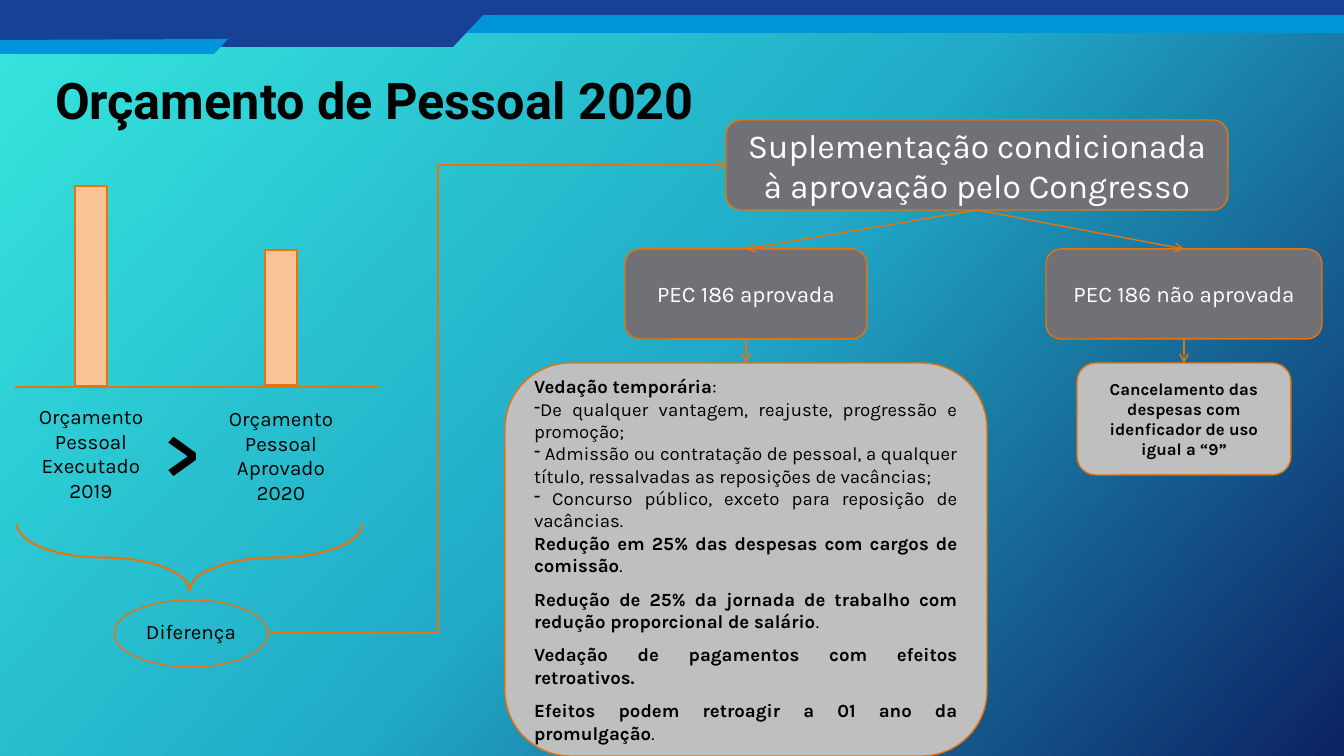
import copy
import dataclasses
import pptx
import pptx.dml.color
import pptx.enum.shapes
import pptx.enum.text
import pptx.oxml.ns
import pptx.oxml.xmlchemy
import pptx.util

SCALE = 914400 / 100.8
SHAPES = pptx.enum.shapes.MSO_SHAPE
LINKS = pptx.enum.shapes.MSO_CONNECTOR
ALIGN = pptx.enum.text.PP_ALIGN
ANCHOR = pptx.enum.text.MSO_ANCHOR
qn = pptx.oxml.ns.qn


@dataclasses.dataclass(frozen=True)
class Theme:
    heading_font: str = "Roboto"
    body_font: str = "Karla"
    gradient: tuple = ("36E6DD", "21ABC8", "0C2263")
    navy: str = "164194"
    sky: str = "0095DB"
    orange: str = "E5730E"
    peach: str = "F8C496"
    dark: str = "707176"
    light: str = "BFBFBF"
    black: str = "000000"
    white: str = "FFFFFF"
    title: float = 36
    sign: float = 48
    headline: float = 24
    branch: float = 16
    label: float = 14.7
    detail: float = 13.3
    note: float = 12
    gap: float = 8


THEME = Theme()


def px(*lengths):
    return [pptx.util.Emu(round(length * SCALE)) for length in lengths]


def rgb(color):
    return pptx.dml.color.RGBColor.from_string(color)


def add_xml(parent, tag, **attributes):
    child = pptx.oxml.xmlchemy.OxmlElement(tag)
    for name, value in attributes.items():
        child.set(name, value)
    parent.append(child)
    return child


def style_para(para, size, color=THEME.black, bold=False, align=ALIGN.CENTER, font=THEME.body_font):
    para.alignment = align
    for span in para.runs:
        span.font.size = pptx.util.Pt(size)
        span.font.name = font
        span.font.bold = bold
        span.font.color.rgb = rgb(color)


def paint(shape, fill, line=None, width=1):
    shape.shadow.inherit = False
    if fill:
        shape.fill.solid()
        shape.fill.fore_color.rgb = rgb(fill)
    else:
        shape.fill.background()
    if line:
        shape.line.color.rgb = rgb(line)
        shape.line.width = pptx.util.Pt(width)
    else:
        shape.line.fill.background()
    return shape


def add_shape(page, kind, frame, fill, line=THEME.orange, width=1):
    return paint(page.shapes.add_shape(kind, *px(*frame)), fill, line, width)


def add_ribbon(page, points, fill):
    builder = page.shapes.build_freeform(*points[0], scale=SCALE)
    builder.add_line_segments(points[1:], close=True)
    paint(builder.convert_to_shape(), fill)


def add_label(page, frame, text, size, bold=False, align=ALIGN.CENTER):
    box = page.shapes.add_textbox(*px(*frame))
    box.text_frame.word_wrap = True
    box.text_frame.text = text
    style_para(box.text_frame.paragraphs[0], size, bold=bold, align=align)


def add_card(page, frame, fill, text="", size=THEME.branch, color=THEME.white, bold=False):
    card = add_shape(page, SHAPES.ROUNDED_RECTANGLE, frame, fill)
    card.text_frame.word_wrap = True
    card.text_frame.vertical_anchor = ANCHOR.MIDDLE
    card.text_frame.text = text
    style_para(card.text_frame.paragraphs[0], size, color, bold)
    return card


def add_link(page, start, end, kind=LINKS.STRAIGHT, arrow=True):
    link = page.shapes.add_connector(kind, *px(*start, *end))
    link.line.color.rgb = rgb(THEME.orange)
    link.line.width = pptx.util.Pt(1)
    properties = link.element.spPr
    if arrow:
        add_xml(properties.find(qn("a:ln")), "a:tailEnd", type="arrow")
    add_xml(properties, "a:effectLst")
    return link


def join_cards(page, upper, lower):
    link = add_link(page, (0, 0), (0, 0))
    link.begin_connect(upper, 2)
    link.end_connect(lower, 0)


def fill_measures(card, measures):
    frame = card.text_frame
    for index, (strong, plain, bulleted, spaced) in enumerate(measures):
        para = frame.paragraphs[0] if index == 0 else frame.add_paragraph()
        if bulleted:
            properties = para._p.get_or_add_pPr()
            properties.set("marL", "0")
            properties.set("indent", "0")
            add_xml(properties, "a:buChar", char="-")
        para.text = strong or plain
        if strong and plain:
            para.add_run().text = plain
        style_para(para, THEME.detail, align=ALIGN.JUSTIFY)
        if strong:
            para.runs[0].font.bold = True
        if spaced:
            para.space_before = pptx.util.Pt(THEME.gap)


def paint_background(page):
    fill = page.background.fill
    fill.gradient()
    fill.gradient_angle = 318
    stops = page.element.find(".//" + qn("a:gsLst"))
    stops.insert(1, copy.deepcopy(stops[0]))
    for index, (stop, color) in enumerate(zip(fill.gradient_stops, THEME.gradient)):
        stop.position = index / 2
        stop.color.rgb = rgb(color)


def add_banner(page):
    add_shape(page, SHAPES.RECTANGLE, (0, 0, 1344, 33), THEME.sky, None)
    add_shape(page, SHAPES.RECTANGLE, (0, 0, 1344, 15), THEME.navy, None)
    add_ribbon(page, [(484, 14), (0, 14), (0, 47), (453, 47)], THEME.navy)
    add_ribbon(page, [(228, 39), (0, 40), (0, 54), (214, 54)], THEME.sky)


def add_title(page, text):
    title = page.shapes.title
    title.left, title.top, title.width, title.height = px(45, 66, 1252, 127)
    frame = title.text_frame
    frame.margin_left = frame.margin_right = frame.margin_top = frame.margin_bottom = px(10)[0]
    frame.vertical_anchor = ANCHOR.TOP
    frame.text = text
    frame.paragraphs[0].line_spacing = 0.9
    style_para(frame.paragraphs[0], THEME.title, bold=True, align=ALIGN.LEFT, font=THEME.heading_font)


def add_comparison(page):
    add_label(page, (155, 406, 103, 92), ">", THEME.sign, True, ALIGN.LEFT)
    for bar, label, text in (
        ((75, 186, 32, 200), (20, 399, 142, 110), "Orçamento Pessoal Executado 2019"),
        ((265, 250, 32, 135), (210, 401, 142, 110), "Orçamento Pessoal Aprovado 2020"),
    ):
        add_shape(page, SHAPES.RECTANGLE, bar, THEME.peach)
        add_label(page, label, text, THEME.label)
    add_link(page, (15, 387), (379, 387), arrow=False)
    brace = add_shape(page, SHAPES.LEFT_BRACE, (156, 385, 67, 345), None, width=1.5)
    brace.adjustments[0] = 1.293
    brace.rotation = 270
    add_shape(page, SHAPES.OVAL, (114, 600, 154, 67), None)
    add_label(page, (120, 614, 142, 35), "Diferença", THEME.label)


def add_decision_tree(page):
    route = add_link(page, (268, 633), (726, 165), LINKS.ELBOW)
    guides = route.element.spPr.find(qn("a:prstGeom")).get_or_add_avLst()
    add_xml(guides, "a:gd", name="adj1", fmla="val 37100")
    root = add_card(page, (726, 120, 502, 90), THEME.dark,
                    "Suplementação condicionada à aprovação pelo Congresso", THEME.headline)
    approved = add_card(page, (625, 249, 242, 90), THEME.dark, "PEC 186 aprovada")
    rejected = add_card(page, (1046, 249, 276, 90), THEME.dark, "PEC 186 não aprovada")
    measures = add_card(page, (505, 363, 482, 393), THEME.light)
    fill_measures(measures, (
        ("Vedação temporária", ":", False, False),
        ("", "De qualquer vantagem, reajuste, progressão e promoção;", True, False),
        ("", " Admissão ou contratação de pessoal, a qualquer título, "
             "ressalvadas as reposições de vacâncias;", True, False),
        ("", " Concurso público, exceto para reposição de vacâncias.", True, False),
        ("Redução em 25% das despesas com cargos de comissão", ".", False, False),
        ("Redução de 25% da jornada de trabalho com redução proporcional de salário", ".", False, True),
        ("Vedação de pagamentos com efeitos retroativos.", "", False, True),
        ("Efeitos podem retroagir a 01 ano da promulgação", ".", False, True),
    ))
    cancelled = add_card(page, (1077, 363, 214, 112), THEME.light,
                         "Cancelamento das despesas com idenficador de uso igual a “9”",
                         THEME.note, THEME.black, True)
    for upper, lower in ((root, approved), (root, rejected), (approved, measures), (rejected, cancelled)):
        join_cards(page, upper, lower)


def main():
    deck = pptx.Presentation()
    deck.slide_width, deck.slide_height = px(1344, 756)
    page = deck.slides.add_slide(deck.slide_layouts[5])
    paint_background(page)
    add_banner(page)
    add_title(page, "Orçamento de Pessoal 2020")
    add_comparison(page)
    add_decision_tree(page)
    deck.save("out.pptx")


if __name__ == "__main__":
    main()
